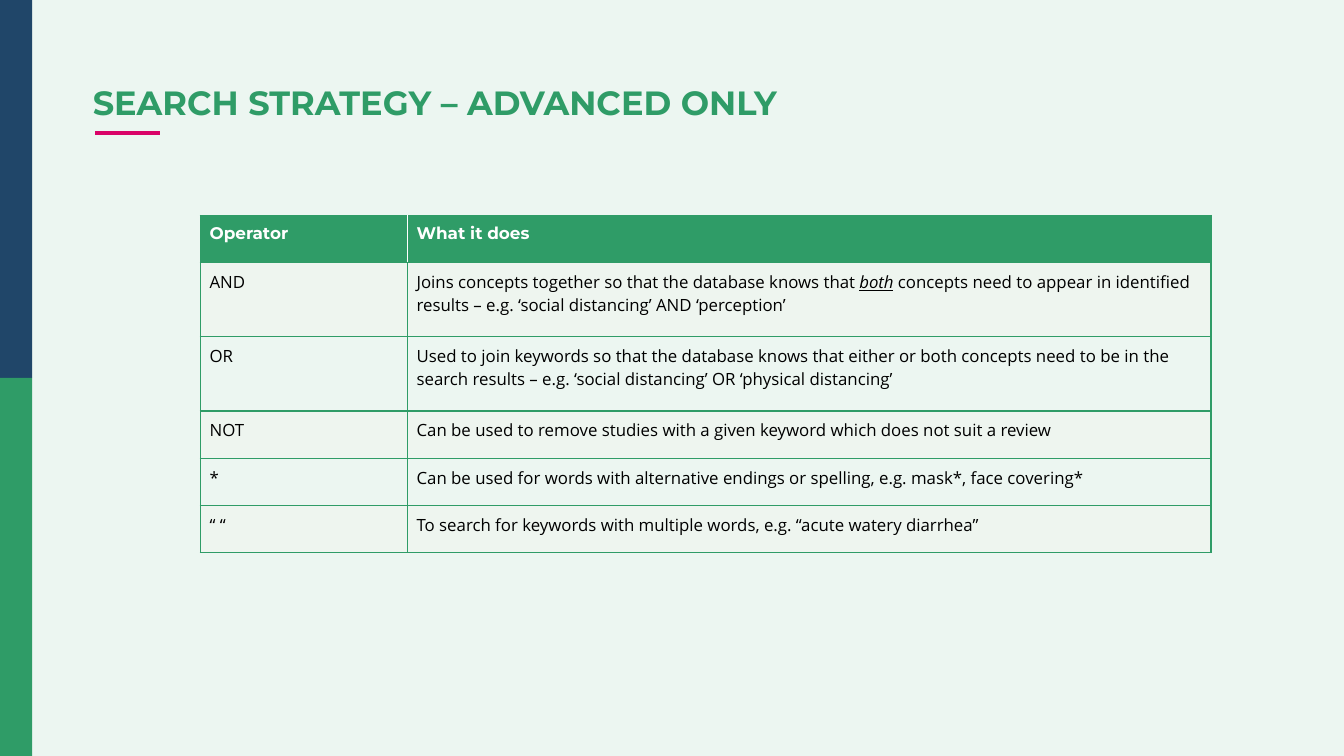
from collections import namedtuple
from dataclasses import dataclass

from lxml.etree import SubElement
from pptx import Presentation
from pptx.dml.color import RGBColor as RGB
from pptx.enum.shapes import MSO_CONNECTOR as CONN, MSO_SHAPE as SHAPE
from pptx.enum.text import MSO_ANCHOR as ANCHOR
from pptx.oxml.ns import qn
from pptx.util import Inches, Pt


@dataclass(frozen=True)
class Theme:
    back: str = "ECF6F1"
    navy: str = "204669"
    green: str = "2F9C67"
    pink: str = "D90368"
    band: str = "EEF5EF"
    white: str = "FFFFFF"
    black: str = "000000"
    head_font: str = "Montserrat"
    body_font: str = "Open Sans"
    title_size: float = 18
    table_size: float = 9
    rule: float = 2.25
    border: float = 0.75


T = Theme()
TITLE = dict(name=T.head_font, size=Pt(T.title_size), bold=True, color=T.green)
HEAD = dict(name=T.head_font, size=Pt(T.table_size), bold=True, color=T.white)
BODY = dict(name=T.body_font, size=Pt(T.table_size), bold=False, color=T.black)
STRESS = BODY | dict(italic=True, underline=True)

# Each cell is a list of (text, format) runs
HEADER = ["Operator", "What it does"]
OPERATORS = [
    ("AND", [("Joins concepts together so that the database knows that ", BODY),
             ("both", STRESS),
             (" concepts need to appear in identified results – e.g. "
              "‘social distancing’ AND ‘perception’", BODY)]),
    ("OR", [("Used to join keywords so that the database knows that either or "
             "both concepts need to be in the search results – e.g. "
             "‘social distancing’ OR ‘physical distancing’", BODY)]),
    ("NOT", [("Can be used to remove studies with a given keyword which does "
              "not suit a review", BODY)]),
    ("*", [("Can be used for words with alternative endings or spelling, "
            "e.g. mask*, face covering*", BODY)]),
    ("“ “", [("To search for keywords with multiple words, "
              "e.g. “acute watery diarrhea”", BODY)]),
]
COLUMNS = [1.54, 5.98]
ROWS = [0.35, 0.55, 0.55, 0.35, 0.35, 0.35]

Box = namedtuple("Box", "x y w h")


def share(box, x, y, w, h):
    """Part of a box, given as shares of its size."""
    return Box(int(box.x + x * box.w), int(box.y + y * box.h),
               int(w * box.w), int(h * box.h))


def add_runs(p, runs):
    for text, fmt in runs:
        r = p.add_run()
        r.text = text
        for key, value in fmt.items():
            if key == "color":
                r.font.color.rgb = RGB.from_string(value)
            else:
                setattr(r.font, key, value)


def set_attrs(obj, **values):
    for key, value in values.items():
        setattr(obj, key, value)


def set_borders(cell, **sides):
    """Cell edges, named L, R, T and B in that order."""
    tcPr = cell._tc.get_or_add_tcPr()
    for side, color in sides.items():
        ln = SubElement(tcPr, qn(f"a:ln{side}"), w=str(Pt(T.border)))
        fill = SubElement(ln, qn("a:solidFill"))
        SubElement(fill, qn("a:srgbClr"), val=color)


def side_bar(s, box):
    # Two equal blocks, one above the other
    colors = [T.navy, T.green]
    for i, color in enumerate(colors):
        part = share(box, 0, i / len(colors), 1, 1 / len(colors))
        sp = s.shapes.add_shape(SHAPE.RECTANGLE, *part)
        sp.shadow.inherit = False
        sp.fill.solid()
        sp.fill.fore_color.rgb = RGB.from_string(color)
        sp.line.fill.background()


def title(s, box, text):
    # Heading
    tf = s.shapes.add_textbox(*box).text_frame
    set_attrs(tf, word_wrap=True, vertical_anchor=ANCHOR.MIDDLE, margin_left=0,
              margin_top=Inches(0.05), margin_bottom=Inches(0.05))
    p = tf.paragraphs[0]
    p.line_spacing = 0.9
    add_runs(p, [(text, TITLE)])

    # Short rule below it
    rule = share(box, 0.002, 1.08, 0.056, 0)
    line = s.shapes.add_connector(CONN.STRAIGHT, rule.x, rule.y,
                                  rule.x + rule.w, rule.y)
    line.line.color.rgb = RGB.from_string(T.pink)
    line.line.width = Pt(T.rule)
    SubElement(line._element.spPr, qn("a:effectLst"))


def operator_table(s, box):
    rows = [[[(text, HEAD)] for text in HEADER]]
    rows += [[[(name, BODY)], use] for name, use in OPERATORS]
    table = s.shapes.add_table(len(ROWS), len(COLUMNS), *box).table
    set_attrs(table, first_row=False, horz_banding=False)

    # Grid
    for col, width in zip(table.columns, COLUMNS):
        col.width = int(box.w * width / sum(COLUMNS))
    for row, height in zip(table.rows, ROWS):
        row.height = int(box.h * height / sum(ROWS))

    # Cells: green header, then every other row tinted
    for i, row in enumerate(rows):
        for j, runs in enumerate(row):
            cell = table.cell(i, j)
            set_attrs(cell, margin_left=Inches(0.07), margin_right=Inches(0.07),
                      margin_top=Inches(0.06), margin_bottom=Inches(0.06))
            add_runs(cell.text_frame.paragraphs[0], runs)
            inner = T.white if i == 0 else T.green
            set_borders(cell, L=inner if j else T.green,
                        R=T.green if j else inner, T=T.green, B=T.green)
            if i and i % 2 == 0:
                cell.fill.background()
            else:
                cell.fill.solid()
                cell.fill.fore_color.rgb = RGB.from_string(T.band if i else T.green)


def main():
    prs = Presentation()
    prs.slide_width = Inches(10)
    prs.slide_height = prs.slide_width * 9 // 16
    page = Box(0, 0, prs.slide_width, prs.slide_height)

    s = prs.slides.add_slide(prs.slide_layouts[6])
    s.background.fill.solid()
    s.background.fill.fore_color.rgb = RGB.from_string(T.back)

    side_bar(s, share(page, 0, 0, 0.024, 1))
    title(s, share(page, 0.069, 0.105, 0.862, 0.066),
          "SEARCH STRATEGY – ADVANCED ONLY")
    operator_table(s, share(page, 0.149, 0.285, 0.752, 0.446))
    prs.save("out.pptx")


if __name__ == "__main__":
    main()
